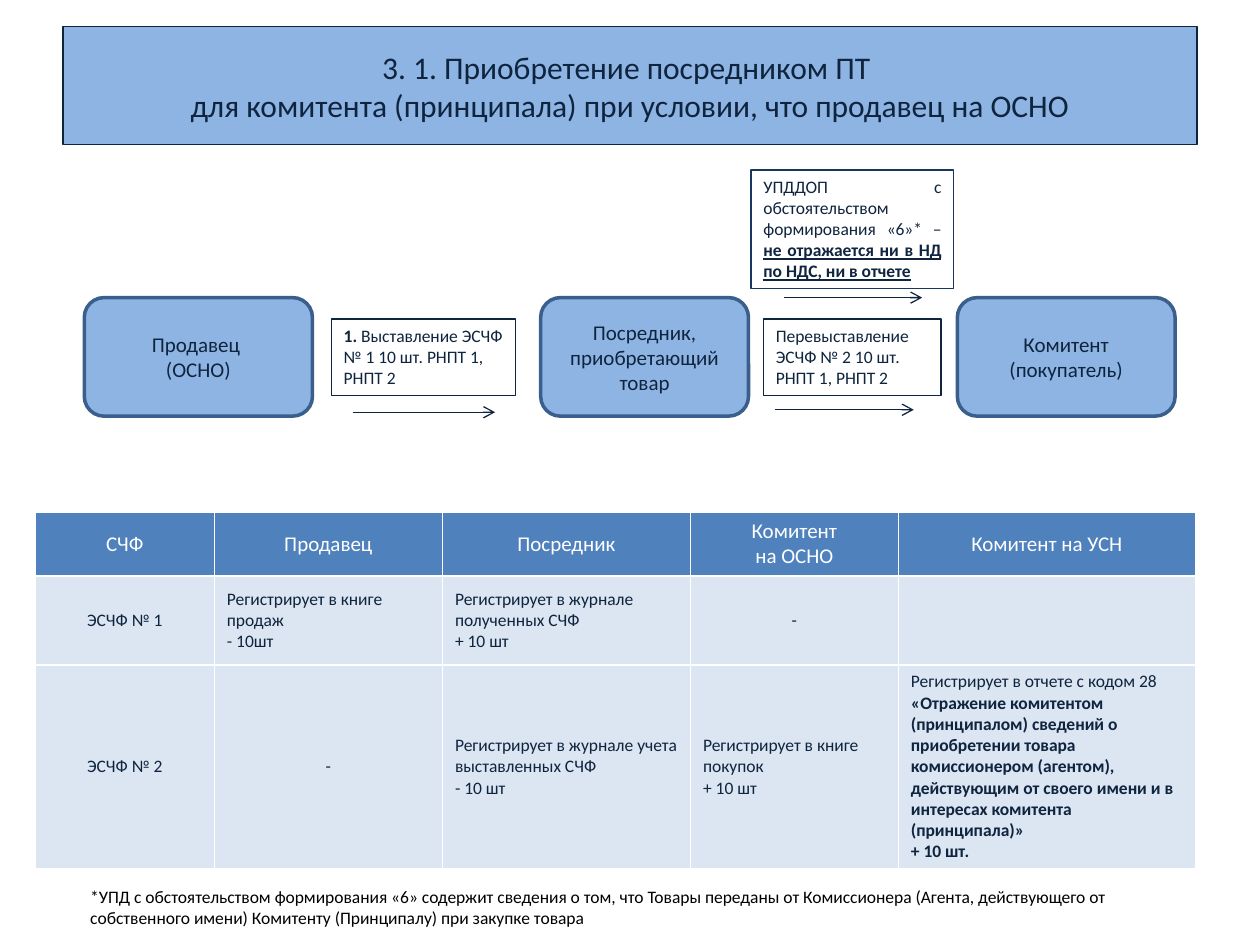
from pptx import Presentation
from pptx.dml.color import RGBColor
from pptx.enum.shapes import MSO_CONNECTOR, MSO_SHAPE
from pptx.enum.text import MSO_ANCHOR, MSO_AUTO_SIZE, PP_ALIGN
from pptx.oxml.ns import qn
from pptx.util import Cm, Pt
from lxml.etree import SubElement

FONT = "Calibri"
INK, BLUE, EDGE, NAVY = "0F243E", "8EB4E3", "3A5F8C", "17375E"
HEAD, PALE, WHITE, BLACK = "4F81BD", "DCE6F2", "FFFFFF", "000000"
LEFT, MID, JUST = PP_ALIGN.LEFT, PP_ALIGN.CENTER, PP_ALIGN.JUSTIFY

# Content: a text is a list of paragraphs, a paragraph a list of (words, style)
# Style letters: b = bold, u = underlined
TITLE = ["3. 1. Приобретение посредником ПТ ",
         "для комитента (принципала) при условии, что продавец на ОСНО"]

# Parties: left, width, text (cm)
PARTIES = [
    (1.7, 4.6, [[("Продавец ", "")], [("(ОСНО)", "")]]),
    (10.9, 4.19, [[("Посредник, приобретающий товар", "")]]),
    (19.3, 4.39, [[("Комитент (покупатель)", "")]]),
]

# Notes: left, top, width, height, line, alignment, text
NOTES = [
    (6.68, 6.43, 3.71, 1.55, INK, LEFT,
     [[("1. ", "b"), ("Выставление ЭСЧФ № 1 10 шт. РНПТ 1, РНПТ 2", "")]]),
    (15.39, 6.43, 3.58, 1.55, INK, LEFT,
     [[("Перевыставление ЭСЧФ № 2 10 шт.", "")], [("РНПТ 1, РНПТ 2", "")]]),
    (15.14, 3.43, 4.09, 2.39, NAVY, JUST,
     [[("УПДДОП с обстоятельством формирования «6»* – ", ""),
       ("не отражается ни в НД по НДС, ни в отчете", "bu")]]),
    (1.57, 17.73, 22.81, 1.12, None, LEFT,
     [[("*УПД с обстоятельством формирования «6» содержит сведения о том, "
        "что Товары переданы от Комиссионера (Агента, действующего от "
        "собственного имени) Комитенту (Принципалу) при закупке товара", "")]]),
]

# Arrows: left, right, height on the slide
ARROWS = [(7.11, 9.98, 8.31), (15.62, 18.42, 8.26), (15.8, 18.59, 6)]

COLS = [3.61, 4.6, 5, 4.19, 5.99]
ROWS = [1.2, 1.8, 4.04]
CELLS = [
    [[[("СЧФ", "")]], [[("Продавец", "")]], [[("Посредник", "")]],
     [[("Комитент", "")], [("на ОСНО", "")]], [[("Комитент на УСН", "")]]],
    [[[("ЭСЧФ № 1", "")]],
     [[("Регистрирует в книге продаж", "")], [("- 10шт", "")]],
     [[("Регистрирует в журнале полученных СЧФ", "")], [("+ 10 шт", "")]],
     [[("-", "")]], []],
    [[[("ЭСЧФ № 2", "")]], [[("-", "")]],
     [[("Регистрирует в журнале учета выставленных СЧФ", "")],
      [("- 10 шт", "")]],
     [[("Регистрирует в книге покупок", "")], [("+ 10 шт", "")]],
     [[("Регистрирует в отчете с кодом 28 ", ""),
       ("«Отражение комитентом (принципалом) сведений о приобретении товара "
        "комиссионером (агентом), действующим от своего имени и в интересах "
        "комитента (принципала)»", "b")], [("+ 10 шт.", "b")]]],
]


def paint(fmt, hue):
    """Give a fill or a line one solid colour."""
    fmt.solid()
    fmt.fore_color.rgb = RGBColor.from_string(hue)


def edge(shape, hue, width):
    paint(shape.line.fill, hue)
    shape.line.width = Pt(width)


def add_run(para, words, size, hue, style=""):
    run = para.add_run()
    run.text = words
    font = run.font
    font.name, font.size = FONT, Pt(size)
    font.bold, font.underline = "b" in style, "u" in style
    font.color.rgb = RGBColor.from_string(hue)


def write(frame, text, size, hue, align):
    for i, runs in enumerate(text):
        para = frame.add_paragraph() if i else frame.paragraphs[0]
        para.alignment = align
        for words, style in runs:
            add_run(para, words, size, hue, style)


def add_title(slide):
    title = slide.shapes.title
    title.left, title.top = Cm(1.27), Cm(0.53)
    title.width, title.height = Cm(22.86), Cm(2.39)
    paint(title.fill, BLUE)
    edge(title, INK, 0.75)
    title.text_frame.vertical_anchor = MSO_ANCHOR.MIDDLE
    para = title.text_frame.paragraphs[0]
    para.alignment = MID
    for i, words in enumerate(TITLE):
        if i:
            para.add_line_break()
        add_run(para, words, 18, INK)


def add_party(slide, left, width, text):
    box = slide.shapes.add_shape(MSO_SHAPE.ROUNDED_RECTANGLE,
                                 Cm(left), Cm(6), Cm(width), Cm(2.39))
    box.shadow.inherit = False
    paint(box.fill, BLUE)
    edge(box, EDGE, 2)
    box.text_frame.word_wrap = True
    box.text_frame.vertical_anchor = MSO_ANCHOR.MIDDLE
    write(box.text_frame, text, 12, INK, MID)


def add_note(slide, left, top, width, height, line, align, text):
    box = slide.shapes.add_textbox(Cm(left), Cm(top), Cm(width), Cm(height))
    if line:
        edge(box, line, 0.75)
    box.text_frame.word_wrap = True
    box.text_frame.auto_size = MSO_AUTO_SIZE.SHAPE_TO_FIT_TEXT
    write(box.text_frame, text, 10, INK if line else BLACK, align)


def add_arrow(slide, left, right, top):
    arrow = slide.shapes.add_connector(MSO_CONNECTOR.STRAIGHT,
                                       Cm(left), Cm(top), Cm(right), Cm(top))
    edge(arrow, INK, 0.75)
    SubElement(arrow.line._get_or_add_ln(), qn("a:tailEnd"), type="arrow")
    SubElement(arrow._element.spPr, qn("a:effectLst"))


def add_grid(slide):
    grid = slide.shapes.add_table(len(ROWS), len(COLS), Cm(0.71), Cm(10.32),
                                  Cm(sum(COLS)), Cm(sum(ROWS))).table
    for col, width in zip(grid.columns, COLS):
        col.width = Cm(width)
    for r, (texts, height) in enumerate(zip(CELLS, ROWS)):
        grid.rows[r].height = Cm(height)
        size, hue, back = (10, INK, PALE) if r else (12, WHITE, HEAD)
        for c, text in enumerate(texts):
            cell = grid.cell(r, c)
            cell.vertical_anchor = MSO_ANCHOR.MIDDLE
            paint(cell.fill, back)
            # Headings, row names and dashes are centred
            mid = r == 0 or c == 0 or text == [[("-", "")]]
            write(cell.text_frame, text, size, hue, MID if mid else LEFT)


def main():
    deck = Presentation()
    deck.slide_width, deck.slide_height = Cm(25.4), Cm(19.05)
    slide = deck.slides.add_slide(deck.slide_layouts[5])
    add_title(slide)
    # Flow of invoices
    for party in PARTIES:
        add_party(slide, *party)
    for arrow in ARROWS:
        add_arrow(slide, *arrow)
    # Table of entries, then notes and footnote
    add_grid(slide)
    for note in NOTES:
        add_note(slide, *note)
    deck.save("out.pptx")


if __name__ == "__main__":
    main()
